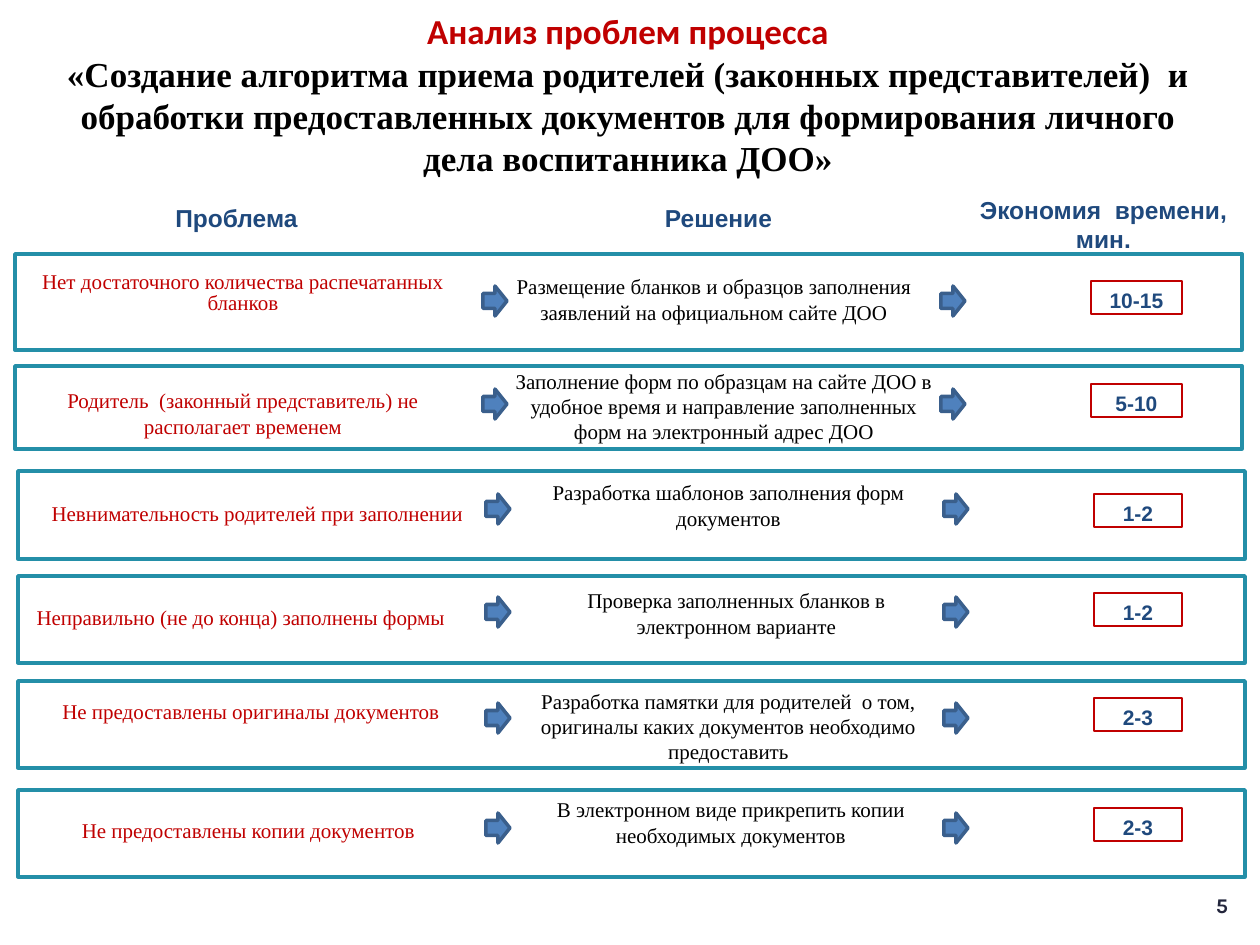
from dataclasses import dataclass

from pptx import Presentation
from pptx.dml.color import RGBColor
from pptx.enum.shapes import MSO_SHAPE
from pptx.enum.text import MSO_ANCHOR, MSO_AUTO_SIZE, PP_ALIGN
from pptx.util import Emu, Pt

SLIDE_WIDTH, SLIDE_HEIGHT = 1260, 945
EMU_PER_PX = 914400 / 126
RED, NAVY, BLACK, TEAL = "C00000", "1F497D", "000000", "248FA8"
ARROW_FILL, ARROW_LINE, NUMBER_COLOR = "4F81BD", "3A5F8C", "23263C"
SERIF, SANS = "Times New Roman", "Arial"


@dataclass
class TextSpot:
    left: int
    width: int
    middle: int
    lines: list
    spacing: float = 1.0


@dataclass
class Row:
    shift: int
    top: int
    height: int
    arrow_top: int
    saving_top: int
    saving: str
    problem: TextSpot
    solution: TextSpot


HEADINGS = [
    TextSpot(121, 231, 218, ["Проблема"]),
    TextSpot(609, 219, 218, ["Решение"]),
    TextSpot(947, 313, 224, ["Экономия  времени, мин."]),
]

ROWS = [
    Row(0, 254, 96, 286, 281, "10-15",
        TextSpot(15, 456, 294, ["Нет достаточного количества распечатанных", "бланков"], 0.8),
        TextSpot(501, 426, 299, ["Размещение бланков и образцов заполнения заявлений на официальном сайте ДОО"])),
    Row(0, 366, 83, 389, 384, "5-10",
        TextSpot(15, 456, 413, ["Родитель  (законный представитель) не располагает временем"]),
        TextSpot(501, 446, 406, ["Заполнение форм по образцам на сайте ДОО в удобное время и направление "
                                 "заполненных форм на электронный адрес ДОО"])),
    Row(3, 471, 88, 494, 494, "1-2",
        TextSpot(18, 479, 513, ["Невнимательность родителей при заполнении"]),
        TextSpot(522, 413, 505, ["Разработка шаблонов заполнения форм документов"])),
    Row(3, 576, 87, 597, 593, "1-2",
        TextSpot(15, 452, 617, ["Неправильно (не до конца) заполнены формы"]),
        TextSpot(530, 413, 613, ["Проверка заполненных бланков в электронном варианте"])),
    Row(3, 681, 87, 703, 698, "2-3",
        TextSpot(15, 472, 711, ["Не предоставлены оригиналы документов"]),
        TextSpot(522, 413, 726, ["Разработка памятки для родителей  о том, оригиналы каких документов "
                                 "необходимо предоставить"])),
    Row(3, 790, 87, 813, 808, "2-3",
        TextSpot(15, 467, 830, ["Не предоставлены копии документов"]),
        TextSpot(528, 406, 822, ["В электронном виде прикрепить копии необходимых документов"])),
]


def px(length):
    return Emu(round(length * EMU_PER_PX))


def color(value):
    return RGBColor.from_string(value)


def style_paragraph(paragraph, text, font_name, size, font_color, bold=False, spacing=1.0):
    paragraph.text = text
    paragraph.alignment = PP_ALIGN.CENTER
    paragraph.line_spacing = spacing
    font = paragraph.font
    font.name, font.size, font.bold = font_name, Pt(size), bold
    font.color.rgb = color(font_color)


def prepare_frame(shape, top_inset=0, bottom_inset=0):
    frame = shape.text_frame
    frame.word_wrap = True
    frame.auto_size = MSO_AUTO_SIZE.NONE
    frame.vertical_anchor = MSO_ANCHOR.MIDDLE
    frame.margin_left = frame.margin_right = px(12)
    frame.margin_top, frame.margin_bottom = px(top_inset), px(bottom_inset)
    return frame


def add_text(slide, spot, font_name, size, font_color, bold=False):
    height = 80
    shape = slide.shapes.add_textbox(
        px(spot.left), px(spot.middle - height // 2), px(spot.width), px(height))
    frame = prepare_frame(shape)
    for index, line in enumerate(spot.lines):
        paragraph = frame.add_paragraph() if index else frame.paragraphs[0]
        style_paragraph(paragraph, line, font_name, size, font_color, bold, spot.spacing)


def add_outlined(slide, kind, left, top, width, height, line_color, line_width, fill_color=None):
    shape = slide.shapes.add_shape(kind, px(left), px(top), px(width), px(height))
    shape.shadow.inherit = False
    if fill_color:
        shape.fill.solid()
        shape.fill.fore_color.rgb = color(fill_color)
    else:
        shape.fill.background()
    shape.line.color.rgb = color(line_color)
    shape.line.width = Pt(line_width)
    return shape


def add_title(slide):
    title = slide.shapes.title
    title.left, title.top, title.width, title.height = px(29), px(10), px(1198), px(168)
    frame = prepare_frame(title)
    style_paragraph(frame.paragraphs[0], "Анализ проблем процесса", "Calibri", 20, RED, True, Pt(24))
    style_paragraph(
        frame.add_paragraph(),
        "«Создание алгоритма приема родителей (законных представителей)  и обработки "
        "предоставленных документов для формирования личного дела воспитанника ДОО»",
        SERIF, 20, BLACK, True, Pt(24))


def add_row(slide, row):
    add_outlined(slide, MSO_SHAPE.RECTANGLE, 15 + row.shift, row.top, 1227, row.height, TEAL, 2)
    for left in (483, 941):
        add_outlined(slide, MSO_SHAPE.RIGHT_ARROW, left + row.shift, row.arrow_top, 24, 30,
                     ARROW_LINE, 2, ARROW_FILL)
    add_text(slide, row.problem, SERIF, 12, RED)
    add_text(slide, row.solution, SERIF, 12, BLACK)
    saving = add_outlined(slide, MSO_SHAPE.RECTANGLE, 1091 + row.shift, row.saving_top,
                          91 - row.shift, 33, RED, 1.5)
    frame = prepare_frame(saving, 11, 1)
    style_paragraph(frame.paragraphs[0], row.saving, SANS, 12, NAVY, True, 0.8)


def main():
    presentation = Presentation()
    presentation.slide_width = px(SLIDE_WIDTH)
    presentation.slide_height = px(SLIDE_HEIGHT)
    slide = presentation.slides.add_slide(presentation.slide_layouts[5])
    add_title(slide)
    for heading in HEADINGS:
        add_text(slide, heading, SANS, 14, NAVY, True)
    for row in ROWS:
        add_row(slide, row)
    add_text(slide, TextSpot(1191, 62, 905, ["5"]), "Karla", 12, NUMBER_COLOR, True)
    presentation.save("out.pptx")


if __name__ == "__main__":
    main()
